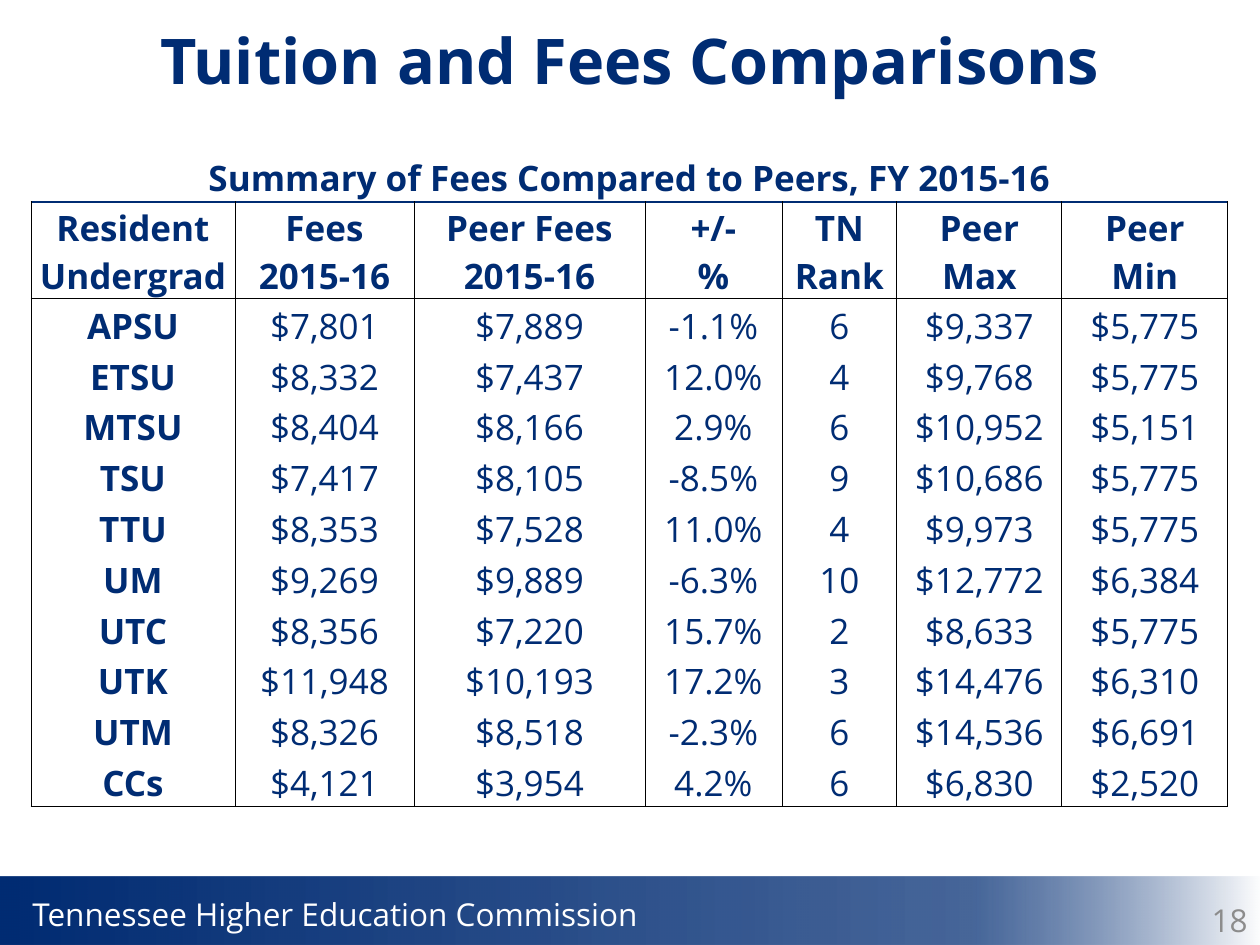
import dataclasses

import lxml.etree
import pptx
import pptx.dml.color
import pptx.enum.shapes
import pptx.enum.text
import pptx.oxml
import pptx.oxml.ns
import pptx.util

RGB = pptx.dml.color.RGBColor
ALIGN = pptx.enum.text.PP_ALIGN
ANCHOR = pptx.enum.text.MSO_ANCHOR
NAVY = RGB(0x00, 0x2C, 0x73)
WHITE = RGB(0xFF, 0xFF, 0xFF)
GREY = RGB(0x8C, 0x8C, 0x8C)
BLACK = RGB(0x00, 0x00, 0x00)
FONT = "Open Sans"
SCALE = 914400 / 126
NS = 'xmlns:a="http://schemas.openxmlformats.org/drawingml/2006/main"'

COLS = [204, 179, 231, 137, 115, 165, 166]
CAPTION = "Summary of Fees Compared to Peers, FY 2015-16"
HEAD = [
    ["Resident", "Fees", "Peer Fees", "+/-", "TN", "Peer", "Peer"],
    ["Undergrad", "2015-16", "2015-16", "%", "Rank", "Max", "Min"],
]
HEAD_TALL = [55, 50, 47]
BODY_TALL = 508


@dataclasses.dataclass
class Box:
    left: int
    top: int
    width: int
    height: int

    def emu(self) -> list[int]:
        return [px(side) for side in dataclasses.astuple(self)]


@dataclasses.dataclass
class School:
    name: str
    fees: str
    peer: str
    diff: str
    rank: str
    high: str
    low: str


SCHOOLS = [
    School("APSU", "$7,801", "$7,889", "-1.1%", "6", "$9,337", "$5,775"),
    School("ETSU", "$8,332", "$7,437", "12.0%", "4", "$9,768", "$5,775"),
    School("MTSU", "$8,404", "$8,166", "2.9%", "6", "$10,952", "$5,151"),
    School("TSU", "$7,417", "$8,105", "-8.5%", "9", "$10,686", "$5,775"),
    School("TTU", "$8,353", "$7,528", "11.0%", "4", "$9,973", "$5,775"),
    School("UM", "$9,269", "$9,889", "-6.3%", "10", "$12,772", "$6,384"),
    School("UTC", "$8,356", "$7,220", "15.7%", "2", "$8,633", "$5,775"),
    School("UTK", "$11,948", "$10,193", "17.2%", "3", "$14,476", "$6,310"),
    School("UTM", "$8,326", "$8,518", "-2.3%", "6", "$14,536", "$6,691"),
    School("CCs", "$4,121", "$3,954", "4.2%", "6", "$6,830", "$2,520"),
]


def px(count: int) -> int:
    return round(count * SCALE)


def write(frame, text: str, *, size: int = 20, color: RGB = NAVY,
          bold: bool = False, align=ALIGN.CENTER) -> None:
    para = frame.paragraphs[0]
    para.alignment = align
    run = para.add_run()
    run.text = text
    run.font.name = FONT
    run.font.size = pptx.util.Pt(size)
    run.font.bold = bold
    run.font.color.rgb = color


def add_title(slide, text: str, box: Box) -> None:
    title = slide.shapes.title
    title.left, title.top, title.width, title.height = box.emu()
    frame = title.text_frame
    frame.auto_size = pptx.enum.text.MSO_AUTO_SIZE.NONE
    frame.vertical_anchor = ANCHOR.TOP
    frame.margin_top = 0
    write(frame, text, size=36, bold=True)


def add_label(slide, text: str, box: Box, wrap: bool, color: RGB, align) -> None:
    frame = slide.shapes.add_textbox(*box.emu()).text_frame
    frame.word_wrap = wrap
    frame.vertical_anchor = ANCHOR.MIDDLE
    write(frame, text, size=18, color=color, align=align)


def add_band(slide, box: Box) -> None:
    """Draw the footer strip, fading from navy to white."""
    band = slide.shapes.add_shape(
        pptx.enum.shapes.MSO_SHAPE.RECTANGLE, *box.emu())
    band.shadow.inherit = False
    band.line.fill.background()
    stops = "".join(
        f'<a:gs pos="{pos}000"><a:srgbClr val="{color}">'
        f'<a:alpha val="{alpha}000"/></a:srgbClr></a:gs>'
        for pos, color, alpha in [(0, NAVY, 100), (77, NAVY, 72), (100, WHITE, 100)])
    fade = pptx.oxml.parse_xml(
        f'<a:gradFill {NS} rotWithShape="1"><a:gsLst>{stops}</a:gsLst>'
        '<a:lin ang="0" scaled="0"/></a:gradFill>')
    shape = band._element.spPr.find(pptx.oxml.ns.qn("a:prstGeom"))
    shape.addnext(fade)


def set_edges(cell, edges: dict[str, tuple[RGB, float]]) -> None:
    """Draw the named sides (L, R, T, B) and blank the others."""
    props = cell._tc.get_or_add_tcPr()
    for side in "LRTB":
        line = lxml.etree.SubElement(props, pptx.oxml.ns.qn(f"a:ln{side}"))
        if side not in edges:
            lxml.etree.SubElement(line, pptx.oxml.ns.qn("a:noFill"))
            continue
        color, width = edges[side]
        line.set("w", str(pptx.util.Pt(width)))
        fill = lxml.etree.SubElement(line, pptx.oxml.ns.qn("a:solidFill"))
        lxml.etree.SubElement(
            fill, pptx.oxml.ns.qn("a:srgbClr")).set("val", str(color))


def find_edges(row: int, col: int, last: int) -> dict[str, tuple[RGB, float]]:
    thin, rule = (BLACK, 0.5), (NAVY, 1)
    if row == 0:
        return {"B": rule}
    edges = {"L": thin, "R": thin}
    if row == 1:
        edges["T"] = rule
    if row == 3:
        edges["T"] = thin
    if row in (2, last):
        edges["B"] = thin
    return edges


def add_fees(slide, left: int, top: int) -> None:
    rows = [[CAPTION] + [""] * (len(COLS) - 1), *HEAD,
            *(list(dataclasses.astuple(school)) for school in SCHOOLS)]
    count = len(SCHOOLS)
    stops = [round(BODY_TALL * step / count) for step in range(count + 1)]
    talls = HEAD_TALL + [low - high for high, low in zip(stops, stops[1:])]
    box = Box(left, top, sum(COLS), sum(talls))
    table = slide.shapes.add_table(len(rows), len(COLS), *box.emu()).table
    table.first_row = table.horz_banding = False
    for col, width in zip(table.columns, COLS):
        col.width = px(width)
    for row, tall in zip(table.rows, talls):
        row.height = px(tall)
    table.cell(0, 0).merge(table.cell(0, len(COLS) - 1))
    for row, texts in enumerate(rows):
        for col, text in enumerate(texts):
            cell = table.cell(row, col)
            set_edges(cell, find_edges(row, col, len(rows) - 1))
            cell.fill.background()
            cell.vertical_anchor = ANCHOR.BOTTOM
            cell.margin_left = cell.margin_right = 0
            cell.margin_top = cell.margin_bottom = 0
            if text:
                write(cell.text_frame, text, bold=row < 3 or col == 0)


def main() -> None:
    deck = pptx.Presentation()
    deck.slide_width, deck.slide_height = px(1260), px(945)
    slide = deck.slides.add_slide(deck.slide_layouts[5])
    add_title(slide, "Tuition and Fees Comparisons", Box(0, 22, 1260, 104))
    add_band(slide, Box(0, 877, 1262, 68))
    add_label(slide, "Tennessee Higher Education Commission",
              Box(20, 888, 636, 51), False, WHITE, ALIGN.LEFT)
    add_label(slide, "18", Box(966, 895, 294, 50), True, GREY, ALIGN.RIGHT)
    add_fees(slide, 31, 147)
    deck.save("out.pptx")


if __name__ == "__main__":
    main()
